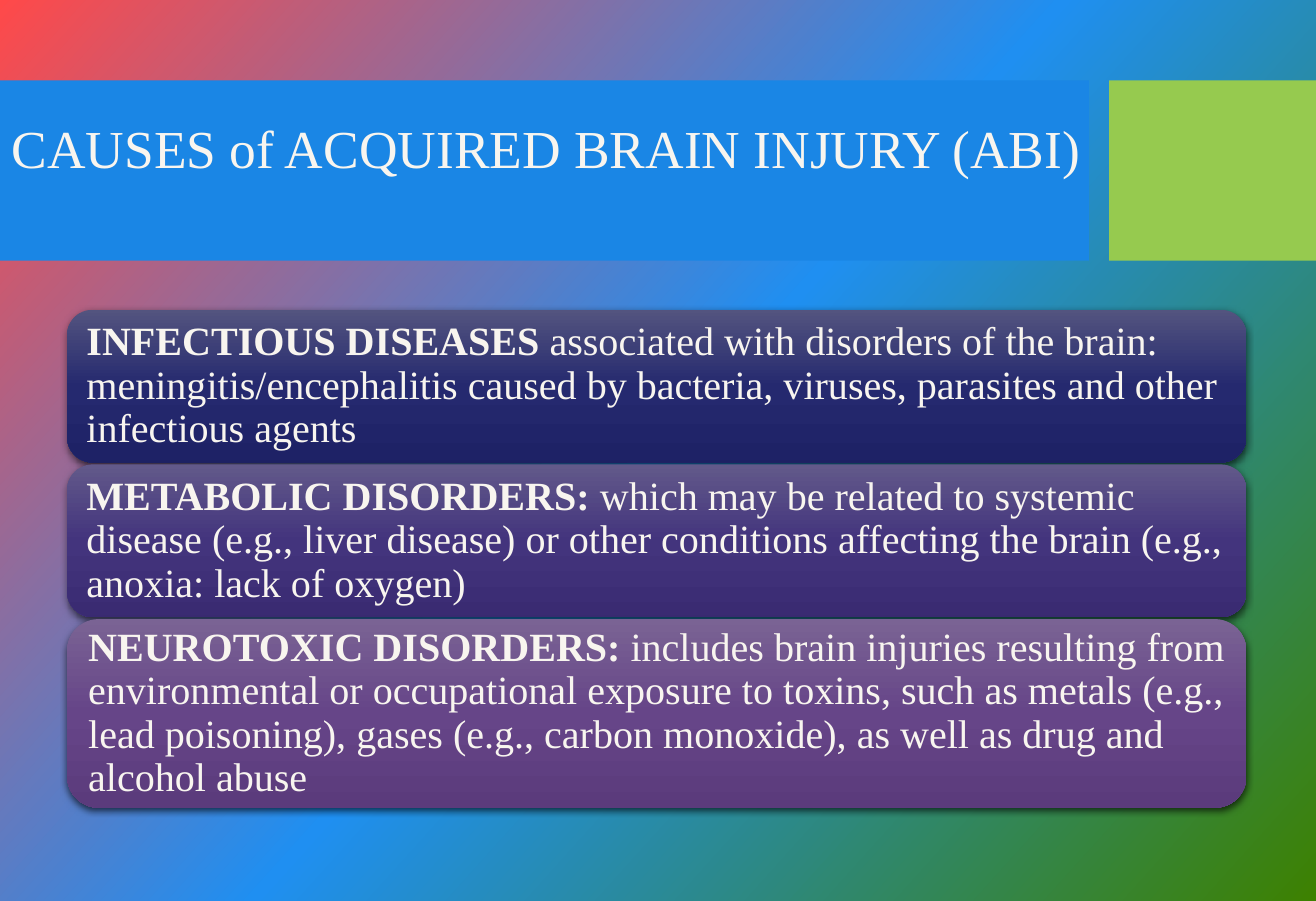
from pptx import Presentation
from pptx.dml.color import RGBColor
from pptx.enum import shapes, text
from pptx.oxml import parse_xml
from pptx.oxml.ns import nsdecls, qn
from pptx.util import Cm, Pt

# Content
TITLE = "CAUSES of ACQUIRED BRAIN INJURY (ABI)"
CARDS = [  # heading, body, height in cm, gradient colours
    ("INFECTIOUS DISEASES ",
     "associated with disorders of the brain: meningitis/encephalitis caused "
     "by bacteria, viruses, parasites and other infectious agents",
     3.23, ("53547F", "25296F", "1E2266")),
    ("METABOLIC DISORDERS: ",
     "which may be related to systemic disease (e.g., liver disease) or other "
     "conditions affecting the brain (e.g., anoxia: lack of oxygen)",
     3.23, ("62598A", "43347D", "3A2B72")),
    ("NEUROTOXIC DISORDERS: ",
     "includes brain injuries resulting from environmental or occupational "
     "exposure to toxins, such as metals (e.g., lead poisoning), gases (e.g., "
     "carbon monoxide), as well as drug and alcohol abuse",
     3.99, ("7A6394", "664588", "5B3B7C")),
]
BANDS = [(0, 23.01, "1A86E5"), (23.44, 4.37, "96CA4F")]  # left, width, colour
BACK = ("FF4949", "1F8FF1", "3D8100")
FONT, INK = "Times New Roman", "F8F5EF"
WIDE, HIGH = 27.81, 19.05
LEFT, TOP, SPAN, GAP = 1.42, 6.55, 24.92, 0.04

deck = Presentation()
deck.slide_width, deck.slide_height = Cm(WIDE), Cm(HIGH)
slide = deck.slides.add_slide(deck.slide_layouts[6])


def color(code):
    return RGBColor.from_string(code)


def blend(owner, fill, codes, angle):
    """Fill with evenly spaced colours; the angle runs clockwise."""
    fill.gradient()
    grad = owner.element.find(".//" + qn("a:gradFill"))
    stops = grad.find(qn("a:gsLst"))
    for old in list(stops):
        stops.remove(old)
    for i, code in enumerate(codes):
        place = i * 100000 // (len(codes) - 1)
        stops.append(parse_xml(
            f'<a:gs {nsdecls("a")} pos="{place}"><a:srgbClr val="{code}"/></a:gs>'))
    grad.find(qn("a:lin")).set("ang", str(angle * 60000))


def block(kind, left, top, width, height):
    shape = slide.shapes.add_shape(kind, Cm(left), Cm(top), Cm(width), Cm(height))
    shape.shadow.inherit = False
    shape.line.fill.background()
    return shape


def write(shape, runs, size):
    frame = shape.text_frame
    frame.word_wrap = True
    frame.vertical_anchor = text.MSO_ANCHOR.MIDDLE
    frame.margin_left = frame.margin_right = Cm(0.25)
    frame.margin_top = frame.margin_bottom = Cm(0.25)
    para = frame.paragraphs[0]
    para.alignment = text.PP_ALIGN.LEFT
    para.line_spacing = 0.9
    for words, bold in runs:
        run = para.add_run()
        run.text = words
        font = run.font
        font.name, font.size, font.bold = FONT, Pt(size), bold
        font.color.rgb = color(INK)


# Background and title bands
blend(slide, slide.background.fill, BACK, 42)
for left, width, code in BANDS:
    band = block(shapes.MSO_SHAPE.RECTANGLE, left, 1.7, width, 3.81)
    band.fill.solid()
    band.fill.fore_color.rgb = color(code)

# Title
title = slide.shapes.add_textbox(Cm(0), Cm(1.07), Cm(23.65), Cm(4.24))
write(title, [(TITLE, False)], 32)

# Stacked cards
top = TOP
for head, body, height, codes in CARDS:
    card = block(shapes.MSO_SHAPE.ROUNDED_RECTANGLE, LEFT, top, SPAN, height)
    blend(card, card.fill, codes, 90)
    card.element.spPr.find(qn("a:effectLst")).append(parse_xml(
        f'<a:outerShdw {nsdecls("a")} blurRad="{Pt(4.5)}" dist="{Pt(1.5)}" '
        'dir="5400000" algn="ctr" rotWithShape="0"><a:srgbClr val="000000">'
        '<a:alpha val="63000"/></a:srgbClr></a:outerShdw>'))
    write(card, [(head, True), (body, False)], 24)
    top += height + GAP

deck.save("out.pptx")
